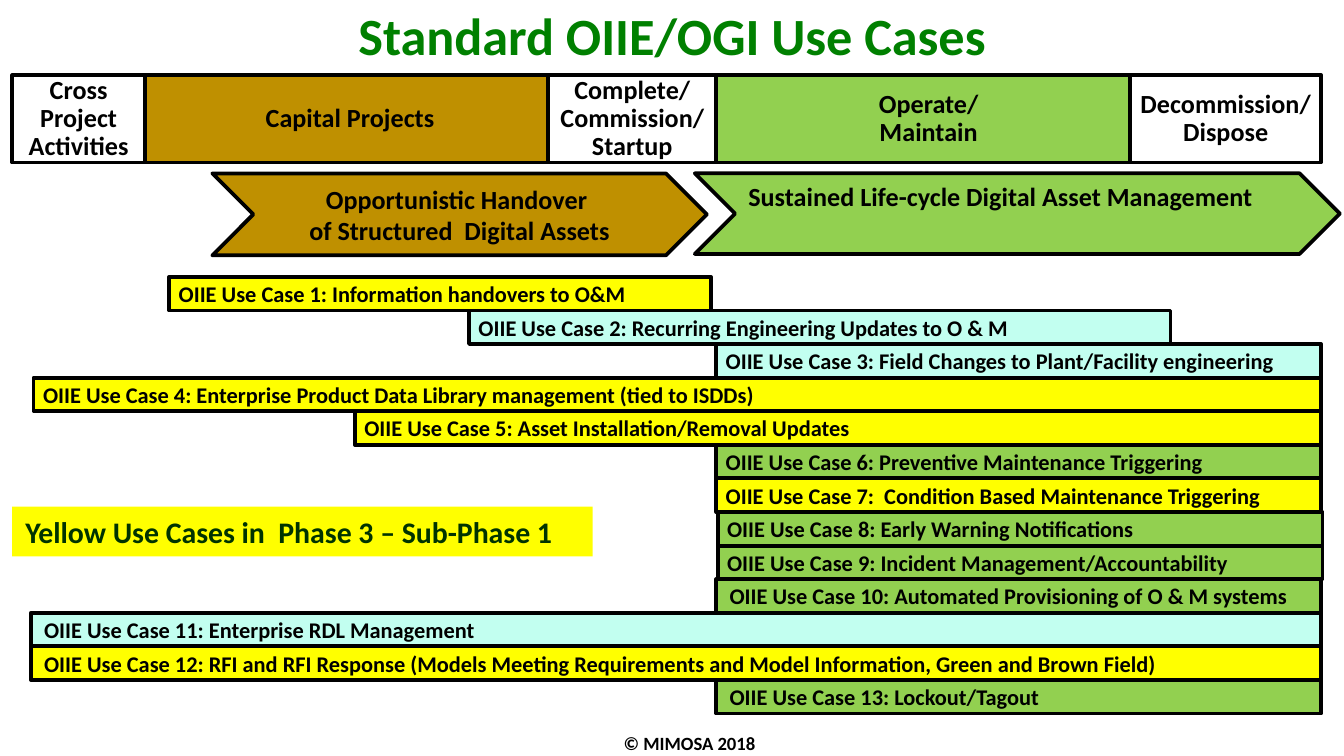
from copy import deepcopy
from pptx import Presentation
from pptx.dml.color import RGBColor
from pptx.enum.shapes import MSO_SHAPE
from pptx.enum.text import MSO_ANCHOR, PP_ALIGN
from pptx.util import Inches, Pt

RECTANGLE, CHEVRON = MSO_SHAPE.RECTANGLE, MSO_SHAPE.CHEVRON
TOP, MIDDLE = MSO_ANCHOR.TOP, MSO_ANCHOR.MIDDLE
LEFT, CENTER = PP_ALIGN.LEFT, PP_ALIGN.CENTER
BLACK, WHITE, YELLOW = "000000", "FFFFFF", "FFFF00"
BROWN, GREEN, AQUA = "BF9000", "92D050", "C2FFF0"

PHASE_TOP, PHASE_HEIGHT = 0.56, 0.65
CASE_TOP, CASE_HEIGHT = 2.06, 0.25
OPERATE, RIGHT_EDGE = 5.33, 9.83

presentation = Presentation()
presentation.slide_width = Inches(10)
presentation.slide_height = presentation.slide_width * 9 // 16
slide = presentation.slides.add_slide(presentation.slide_layouts[5])


def write(shape, text, size=14, color=BLACK, align=LEFT, anchor=MIDDLE, margins=(0.1, 0.05), spacing=1.0):
    frame = shape.text_frame
    frame.word_wrap = True
    frame.vertical_anchor = anchor
    frame.margin_left = frame.margin_right = Inches(margins[0])
    frame.margin_top = frame.margin_bottom = Inches(margins[1])
    paragraph = frame.paragraphs[0]
    paragraph.text = text
    paragraph.alignment = align
    paragraph.line_spacing = spacing
    for run in paragraph.runs:
        run.font.name = "Calibri"
        run.font.size = Pt(size)
        run.font.bold = True
        run.font.color.rgb = RGBColor.from_string(color)
    for line_break in paragraph._p.xpath("a:br"):
        line_break.append(deepcopy(paragraph.runs[0]._r.rPr))


def add_block(kind, left, top, width, height, fill, outlined=True):
    shape = slide.shapes.add_shape(kind, Inches(left), Inches(top), Inches(width), Inches(height))
    shape.shadow.inherit = False
    shape.fill.solid()
    shape.fill.fore_color.rgb = RGBColor.from_string(fill)
    if outlined:
        shape.line.color.rgb = RGBColor.from_string(BLACK)
        shape.line.width = Pt(2)
    else:
        shape.line.fill.background()
    return shape


title = slide.shapes.title
title.left, title.top = Inches(0), Inches(-0.03)
title.width, title.height = presentation.slide_width, Inches(0.58)
write(title, "Standard OIIE/OGI Use Cases", size=28, color="008000", align=CENTER, margins=(0.09, 0.04))

phases = [
    ("Cross Project Activities", 0.09, 0.99, WHITE),
    ("Capital Projects", 1.08, 3.05, BROWN),
    ("Complete/\nCommission/\nStartup", 4.08, 1.25, WHITE),
    ("Operate/\nMaintain", OPERATE, 3.16, GREEN),
    ("Decommission/\nDispose", 8.41, 1.42, WHITE),
]
for text, left, width, fill in phases:
    phase = add_block(RECTANGLE, left, PHASE_TOP, width, PHASE_HEIGHT, fill)
    write(phase, text, align=CENTER, margins=(0.01, 0.04), spacing=0.9)

management = add_block(CHEVRON, 5.17, 1.29, 4.8, 0.6, GREEN)
write(management, "Sustained Life-cycle Digital Asset Management", anchor=TOP)
handover = add_block(CHEVRON, 1.58, 1.29, 3.68, 0.61, BROWN)
write(handover, "Opportunistic Handover \nof Structured  Digital Assets", align=CENTER, margins=(0.01, 0.05))

use_cases = [
    (" Information handovers to O&M", 1.26, 5.29, YELLOW),
    (" Recurring Engineering Updates to O & M", 3.49, 8.71, AQUA),
    (" Field Changes to Plant/Facility engineering", OPERATE, RIGHT_EDGE, AQUA),
    (" Enterprise Product Data Library management (tied to ISDDs)", 0.25, RIGHT_EDGE, YELLOW),
    (" Asset Installation/Removal Updates", 2.64, RIGHT_EDGE, YELLOW),
    (" Preventive Maintenance Triggering", OPERATE, RIGHT_EDGE, GREEN),
    ("  Condition Based Maintenance Triggering", OPERATE, RIGHT_EDGE, YELLOW),
    (" Early Warning Notifications", 5.34, 9.84, GREEN),
    (" Incident Management/Accountability", 5.34, 9.84, GREEN),
    (" Automated Provisioning of O & M systems", OPERATE, RIGHT_EDGE, GREEN),
    (" Enterprise RDL Management", 0.23, RIGHT_EDGE, AQUA),
    (" RFI and RFI Response (Models Meeting Requirements and Model Information, Green and Brown Field)",
     0.23, RIGHT_EDGE, YELLOW),
    (" Lockout/Tagout", OPERATE, RIGHT_EDGE, GREEN),
]
for row, (text, left, right, fill) in enumerate(use_cases):
    use_case = add_block(RECTANGLE, left, CASE_TOP + row * CASE_HEIGHT, right - left, CASE_HEIGHT, fill)
    margins = (0.07, 0.04) if row < 9 else (0.1, 0.05)
    write(use_case, f"OIIE Use Case {row + 1}:{text}", size=12, margins=margins)

legend = add_block(RECTANGLE, 0.09, 3.77, 4.32, 0.37, YELLOW, outlined=False)
write(legend, "Yellow Use Cases in  Phase 3 – Sub-Phase 1", size=16, color="003300", anchor=TOP)

copyright_line = slide.shapes.add_textbox(Inches(4.17), Inches(5.4), Inches(1.92), Inches(0.27))
write(copyright_line, "© MIMOSA 2018", size=10, align=CENTER, anchor=TOP)

presentation.save("out.pptx")
